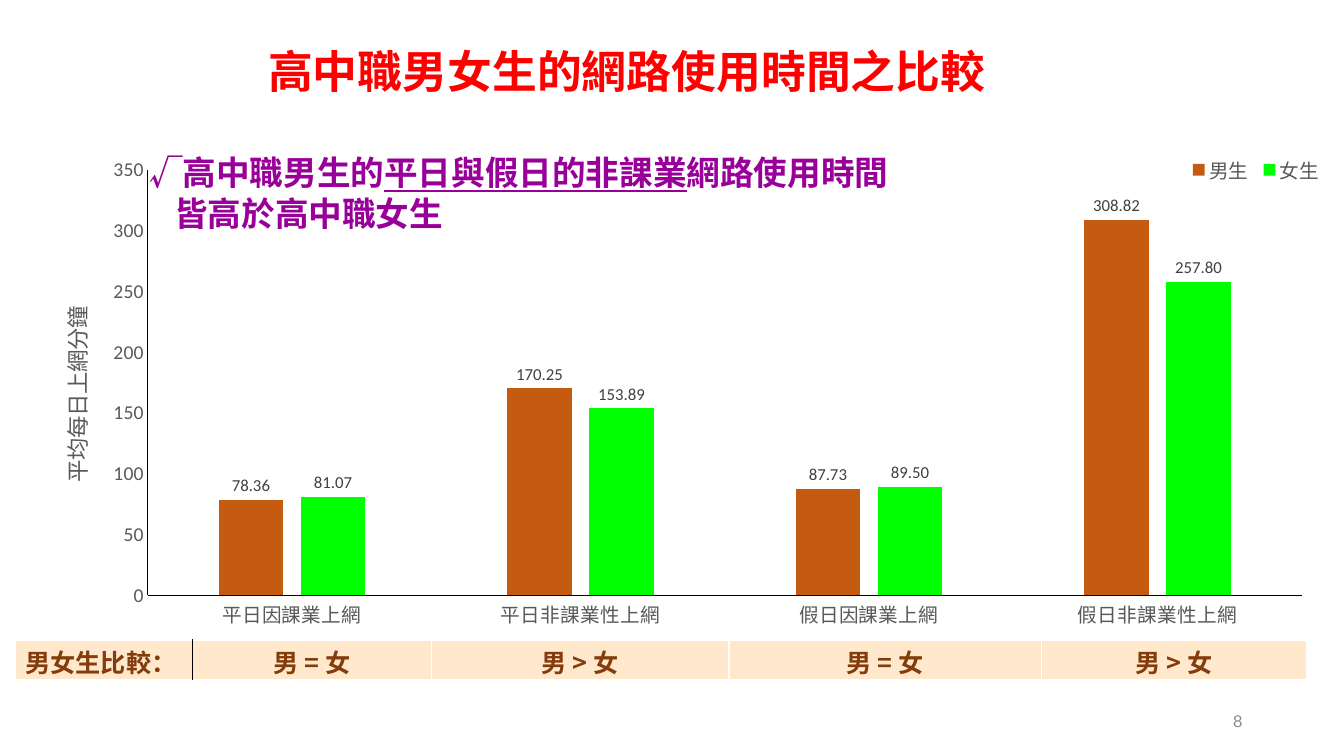
import pptx
import pptx.chart.data
import pptx.dml.color
import pptx.enum.chart
import pptx.enum.text
import pptx.oxml
import pptx.oxml.ns
import pptx.util

Inches = pptx.util.Inches
Pt = pptx.util.Pt
qn = pptx.oxml.ns.qn
rgb = pptx.dml.color.RGBColor.from_string
CENTER = pptx.enum.text.PP_ALIGN.CENTER
MIDDLE = pptx.enum.text.MSO_ANCHOR.MIDDLE
CJK = "Noto Sans CJK SC"
NS = pptx.oxml.ns.nsdecls("a", "c")


def style(font, size, color, name=CJK, bold=False, underline=False):
    font.size, font.name = Pt(size), name
    font.bold, font.underline = bold, underline
    font.color.rgb = rgb(color)
    latin = font._element.find(qn("a:latin")) if hasattr(font, "_element") else font._rPr.find(qn("a:latin"))
    latin.addnext(pptx.oxml.parse_xml(f'<a:ea {NS} typeface="{name}"/>'))


def write(p, text, **fmt):
    r = p.add_run()
    r.text = text
    style(r.font, **fmt)


prs = pptx.Presentation()
prs.slide_width, prs.slide_height = Inches(13.33), Inches(7.5)
s = prs.slides.add_slide(prs.slide_layouts[6])

# Title
tf = s.shapes.add_textbox(Inches(0.47), Inches(0.01), Inches(11.5), Inches(1.45)).text_frame
tf.word_wrap = True
tf.vertical_anchor = MIDDLE
p = tf.paragraphs[0]
p.alignment = CENTER
p.line_spacing = 0.9
write(p, "高中職男女生的網路使用時間之比較", size=32, color="FF0000", bold=True)

# Chart
data = pptx.chart.data.CategoryChartData(number_format="###0.00")
data.categories = ["平日因課業上網", "平日非課業性上網", "假日因課業上網", "假日非課業性上網"]
data.add_series("男生", [78.36, 170.25, 87.73, 308.82])
data.add_series("女生", [81.07, 153.89, 89.5, 257.8])
chart = s.shapes.add_chart(
    pptx.enum.chart.XL_CHART_TYPE.COLUMN_CLUSTERED,
    Inches(0.28), Inches(1.46), Inches(12.89), Inches(5.3), data).chart
chart.has_title = False
style(chart.font, 10, "000000", "Calibri")
plot = chart.plots[0]
plot.vary_by_categories = False
plot.gap_width, plot.overlap = 219, -27
for series, color in zip(plot.series, ["C55A11", "00FF00"]):
    series.format.fill.solid()
    series.format.fill.fore_color.rgb = rgb(color)
    labels = series.data_labels
    labels.show_value = True
    labels.position = pptx.enum.chart.XL_LABEL_POSITION.OUTSIDE_END
    labels.number_format = "###0.00"
    labels.number_format_is_linked = False
    style(labels.font, 12, "404040", "Calibri")

# Axes
for axis, name in [(chart.category_axis, CJK), (chart.value_axis, "Calibri")]:
    axis.has_major_gridlines = False
    axis.major_tick_mark = axis.minor_tick_mark = pptx.enum.chart.XL_TICK_MARK.NONE
    axis.format.line.color.rgb = rgb("000000")
    axis.format.line.width = Pt(0.75)
    style(axis.tick_labels.font, 14, "595959", name)
axis = chart.value_axis
axis.minimum_scale, axis.maximum_scale, axis.major_unit = 0, 350, 50
axis.tick_labels.number_format = "General"
axis.tick_labels.number_format_is_linked = False
tf = axis.axis_title.text_frame
write(tf.paragraphs[0], "平均每日上網分鐘", size=16, color="595959")
body = tf._txBody.find(qn("a:bodyPr"))
body.set("rot", "-5400000")
body.set("vert", "horz")

# Legend
chart.has_legend = True
chart.legend.position = pptx.enum.chart.XL_LEGEND_POSITION.BOTTOM
chart.legend.include_in_layout = False
style(chart.legend.font, 14, "595959")

# Places of the chart parts, as shares of the chart area
plot_area = chart._chartSpace.chart.plotArea
for part, index, target, place in [
        (plot_area, 0, '<c:layoutTarget val="inner"/>', {"x": 0.092, "y": 0.043, "w": 0.888, "h": 0.796}),
        (axis.axis_title._element, 1, "", {"x": 0.02, "y": 0.29}),
        (chart.legend._element, 1, "", {"x": 0.89, "y": 0.015, "w": 0.11, "h": 0.055})]:
    for old in part.findall(qn("c:layout")):
        part.remove(old)
    modes = "".join(f'<c:{k}Mode val="edge"/>' for k in "xy")
    values = "".join(f'<c:{k} val="{v}"/>' for k, v in place.items())
    part.insert(index, pptx.oxml.parse_xml(
        f"<c:layout {NS}><c:manualLayout>{target}{modes}{values}</c:manualLayout></c:layout>"))

# Finding
tf = s.shapes.add_textbox(Inches(1.38), Inches(1.46), Inches(7.56), Inches(0.91)).text_frame
tf.word_wrap = True
finding = dict(size=24, color="990099", bold=True)
p = tf.paragraphs[0]
write(p, "√高中職男生的", **finding)
write(p, "平日與假日的非課業", underline=True, **finding)
write(p, "網路使用時間", **finding)
p = tf.add_paragraph()
p._p.get_or_add_pPr().set("marL", str(Inches(0.25)))
write(p, "皆高於高中職女生", **finding)

# Comparison table
table = s.shapes.add_table(1, 5, Inches(0.15), Inches(6.35), Inches(12.81), Inches(0.39)).table
table.first_row = table.horz_banding = False
texts = ["男女生比較：", "男 = 女", "男 > 女", "男 = 女", "男 > 女"]
for i, (text, width) in enumerate(zip(texts, [1.76, 2.37, 2.95, 3.1, 2.63])):
    table.columns[i].width = Inches(width)
    cell = table.cell(0, i)
    cell.margin_top, cell.margin_bottom = Inches(0.03), 0
    p = cell.text_frame.paragraphs[0]
    if i:
        p.alignment = CENTER
    write(p, text, size=18, color="843C0B", bold=True)
    tcPr = cell._tc.get_or_add_tcPr()
    for side in "LRTB":
        color = "000000" if (i, side) in [(0, "R"), (1, "L")] else "FFFFFF"
        tcPr.append(pptx.oxml.parse_xml(
            f'<a:ln{side} {NS} w="12700"><a:solidFill><a:srgbClr val="{color}"/></a:solidFill></a:ln{side}>'))
    cell.fill.solid()
    cell.fill.fore_color.rgb = rgb("FFE8CC")

# Slide number
tf = s.shapes.add_textbox(Inches(9.42), Inches(6.95), Inches(3), Inches(0.4)).text_frame
tf.word_wrap = True
tf.vertical_anchor = MIDDLE
p = tf.paragraphs[0]
p.alignment = pptx.enum.text.PP_ALIGN.RIGHT
write(p, "8", size=12, color="8C8C8C", name="Arial")

prs.save("out.pptx")
